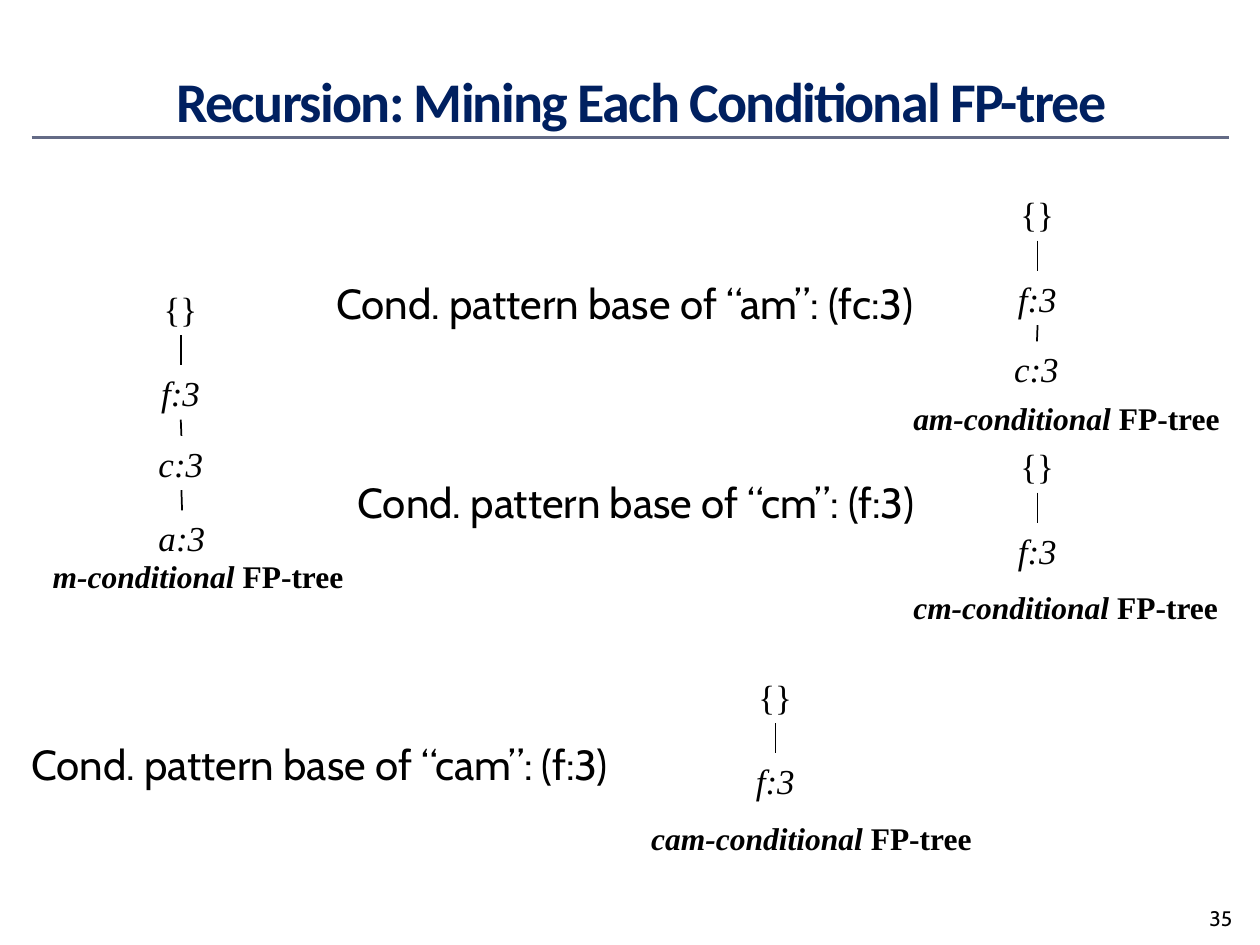
import pptx
import pptx.dml.color
import pptx.enum.shapes
import pptx.enum.text
import pptx.oxml.ns
import pptx.util
from lxml import etree

PX = 9144
COLORS = {"title": "002060", "rule": "646B86", "ink": "000000"}
SERIF = "Times New Roman"
NODE_TOPS = [0, 67, 123, 182]
NODE_WIDTHS = {"{}": 47, "f:3": 51, "c:3": 56, "a:3": 57}
NODE_HEIGHT = 43

TREES = [
    ("m", (32, 223, 251, 254), 144, ["{}", "f:3", "c:3", "a:3"]),
    ("am", (715, 148, 264, 204), 823, ["{}", "f:3", "c:3"]),
    ("cm", (715, 348, 262, 154), 823, ["{}", "f:3"]),
    ("cam", (507, 531, 275, 154), 615, ["{}", "f:3"]),
]
PATTERN_BASES = [
    ("am", "fc:3", (257, 215, 526, 50)),
    ("cm", "f:3", (274, 373, 509, 50)),
    ("cam", "f:3", (15, 581, 526, 50)),
]


def rgb(name):
    """Return the named colour."""
    return pptx.dml.color.RGBColor.from_string(COLORS[name])


def add_text(shapes, box, pieces, font, size, color="ink", wrap=False):
    """Add one line of text from (text, bold, italic) pieces."""
    label = shapes.add_textbox(*(v * PX for v in box))
    frame = label.text_frame
    frame.word_wrap = wrap
    if not wrap:
        frame.auto_size = pptx.enum.text.MSO_AUTO_SIZE.SHAPE_TO_FIT_TEXT
    for text, bold, italic in pieces:
        run = frame.paragraphs[0].add_run()
        run.text = text
        run.font.name = font
        run.font.size = pptx.util.Pt(size)
        run.font.bold = bold
        run.font.italic = italic
        run.font.color.rgb = rgb(color)
    return label


def add_line(shapes, start, end, color, width):
    """Add a straight line without a shadow."""
    line = shapes.add_connector(
        pptx.enum.shapes.MSO_CONNECTOR.STRAIGHT, *(v * PX for v in start + end))
    line.line.color.rgb = rgb(color)
    line.line.width = pptx.util.Pt(width)
    etree.SubElement(line._element.spPr, pptx.oxml.ns.qn("a:effectLst"))
    return line


def add_header(slide, box):
    """Place the slide title and the rule below it."""
    left, top, width, height = box
    title = add_text(slide.shapes, (left + 17, top, width - 16, height),
                     [("Recursion: Mining Each Conditional FP-tree", True, False)],
                     "Calibri", 32, "title", wrap=True)
    title.text_frame.vertical_anchor = pptx.enum.text.MSO_ANCHOR.MIDDLE
    heading = title.text_frame.paragraphs[0]
    heading.alignment = pptx.enum.text.PP_ALIGN.CENTER
    heading.runs[0].font._element.set("spc", "-100")
    rule_y = top + 67
    add_line(slide.shapes, (left, rule_y), (left + width, rule_y), "rule", 1.5)


def add_tree(slide, box, pattern, axis, items):
    """Place a chain of joined nodes with the tree's caption at the bottom."""
    left, top, width, height = box
    tree = slide.shapes.add_group_shape().shapes
    parent = None
    for item, offset in zip(items, NODE_TOPS):
        node_width = NODE_WIDTHS[item]
        node_box = (axis - node_width / 2, top + offset, node_width, NODE_HEIGHT)
        node = add_text(tree, [round(v) for v in node_box],
                        [(item, False, item != "{}")], SERIF, 20)
        if parent is not None:
            branch = add_line(tree, (axis, top), (axis, top + offset), "ink", 1)
            branch.begin_connect(parent, 2)
            branch.end_connect(node, 0)
        parent = node
    add_text(tree, (left, top + height - 40, width, 40),
             [(f"{pattern}-conditional ", True, True), ("FP-tree", True, False)],
             SERIF, 18)


def add_pattern_base(slide, box, pattern, base):
    """Place the statement of one conditional pattern base."""
    statement = f"Cond. pattern base of “{pattern}”: ({base})"
    add_text(slide.shapes, box, [(statement, False, False)], "Cabin", 24)


def add_page_number(slide, box, number):
    """Place the page number."""
    add_text(slide.shapes, box, [(str(number), False, False)], "Cabin", 12, wrap=True)


def main():
    """Build and save the slide."""
    deck = pptx.Presentation()
    deck.slide_width, deck.slide_height = 1000 * PX, 750 * PX
    slide = deck.slides.add_slide(deck.slide_layouts[6])
    add_header(slide, (25, 42, 950, 75))
    add_page_number(slide, (950, 714, 50, 36), 35)
    for pattern, box, axis, items in TREES:
        add_tree(slide, box, pattern, axis, items)
    for pattern, base, box in PATTERN_BASES:
        add_pattern_base(slide, box, pattern, base)
    deck.save("out.pptx")


if __name__ == "__main__":
    main()
